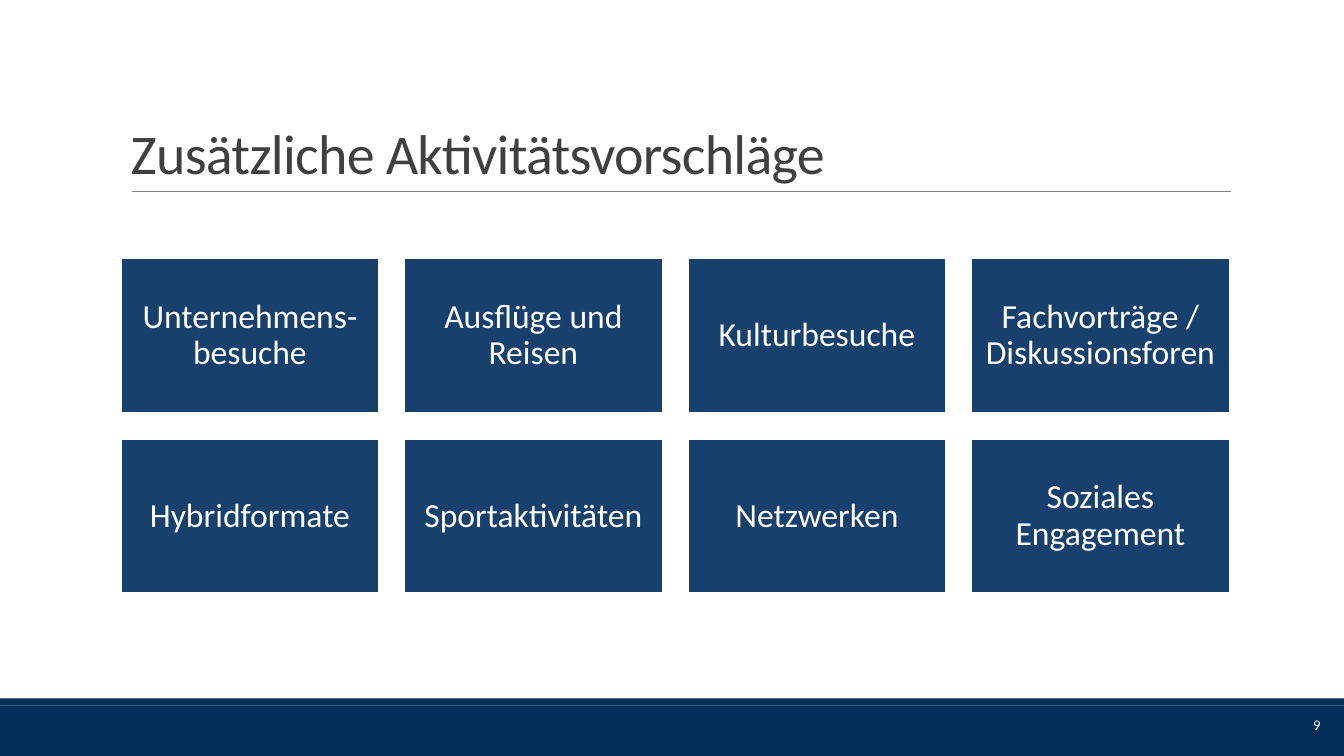
from dataclasses import dataclass

from lxml import etree
from pptx import Presentation
from pptx.dml.color import RGBColor
from pptx.enum.shapes import MSO_CONNECTOR, MSO_SHAPE
from pptx.enum.text import MSO_ANCHOR, PP_ALIGN
from pptx.oxml.ns import qn
from pptx.util import Pt

RECT = MSO_SHAPE.RECTANGLE
STRAIGHT = MSO_CONNECTOR.STRAIGHT
MIDDLE, BOTTOM = MSO_ANCHOR.MIDDLE, MSO_ANCHOR.BOTTOM
LEFT, CENTER, RIGHT = PP_ALIGN.LEFT, PP_ALIGN.CENTER, PP_ALIGN.RIGHT
PX = 9525  # EMU per px, 96 px to the inch


@dataclass(frozen=True)
class Theme:
    font: str = "Calibri"
    white: str = "FFFFFF"
    footer: str = "003058"
    card: str = "17406D"
    title: str = "404040"
    rule: str = "808080"
    title_size: float = 40
    card_size: float = 24
    number_size: float = 10.5


theme = Theme()


def add_rect(x, y, w, h, fill):
    s = slide.shapes.add_shape(RECT, x * PX, y * PX, w * PX, h * PX)
    s.shadow.inherit = False
    s.fill.solid()
    s.fill.fore_color.rgb = RGBColor.from_string(fill)
    s.line.fill.background()
    return s


def write(s, text, *, size, color, align=LEFT, anchor=MIDDLE, line_spacing=1.0, tracking=0):
    """Set a shape's text; tracking is in hundredths of a point."""
    tf = s.text_frame
    tf.word_wrap = True
    tf.vertical_anchor = anchor
    p = tf.paragraphs[0]
    p.alignment = align
    p.line_spacing = line_spacing
    r = p.add_run()
    r.text = text
    r.font.name = theme.font
    r.font.size = Pt(size)
    r.font.color.rgb = RGBColor.from_string(color)
    if tracking:
        r.font._element.set("spc", str(tracking))
    return tf


prs = Presentation()
prs.slide_width, prs.slide_height = 1280 * PX, 720 * PX
slide = prs.slides.add_slide(prs.slide_layouts[6])

# Footer band with its thin upper strip
add_rect(0, 672, 1280, 48, theme.footer)
add_rect(0, 665, 1280, 7, theme.footer)

# Title and rule
rule = slide.shapes.add_connector(STRAIGHT, 126 * PX, 182 * PX, 1172 * PX, 182 * PX)
rule.line.color.rgb = RGBColor.from_string(theme.rule)
rule.line.width = Pt(0.5)
etree.SubElement(rule._element.spPr, qn("a:effectLst"))

title = slide.shapes.add_textbox(115 * PX, 30 * PX, 1056 * PX, 152 * PX)
write(title, "Zusätzliche Aktivitätsvorschläge", size=theme.title_size, color=theme.title,
      anchor=BOTTOM, line_spacing=0.85, tracking=-50)

# Activity cards
activities = [
    ["Unternehmens-besuche", "Ausflüge und Reisen", "Kulturbesuche",
     "Fachvorträge / Diskussionsforen"],
    ["Hybridformate", "Sportaktivitäten", "Netzwerken", "Soziales Engagement"],
]
card_w, card_h = 246, 147
pitch_x, pitch_y = 270, 172
for row, names in enumerate(activities):
    for col, name in enumerate(names):
        card = add_rect(115 + col * pitch_x, 246 + row * pitch_y, card_w, card_h, theme.card)
        card.line.color.rgb = RGBColor.from_string(theme.white)
        card.line.width = Pt(1.25)
        tf = write(card, name, size=theme.card_size, color=theme.white,
                   align=CENTER, line_spacing=0.9)
        tf.margin_top = tf.margin_bottom = 10 * PX

# Page number
number = slide.shapes.add_textbox(1130 * PX, 671 * PX, 137 * PX, 38 * PX)
write(number, "9", size=theme.number_size, color=theme.white, align=RIGHT)

prs.save("out.pptx")
